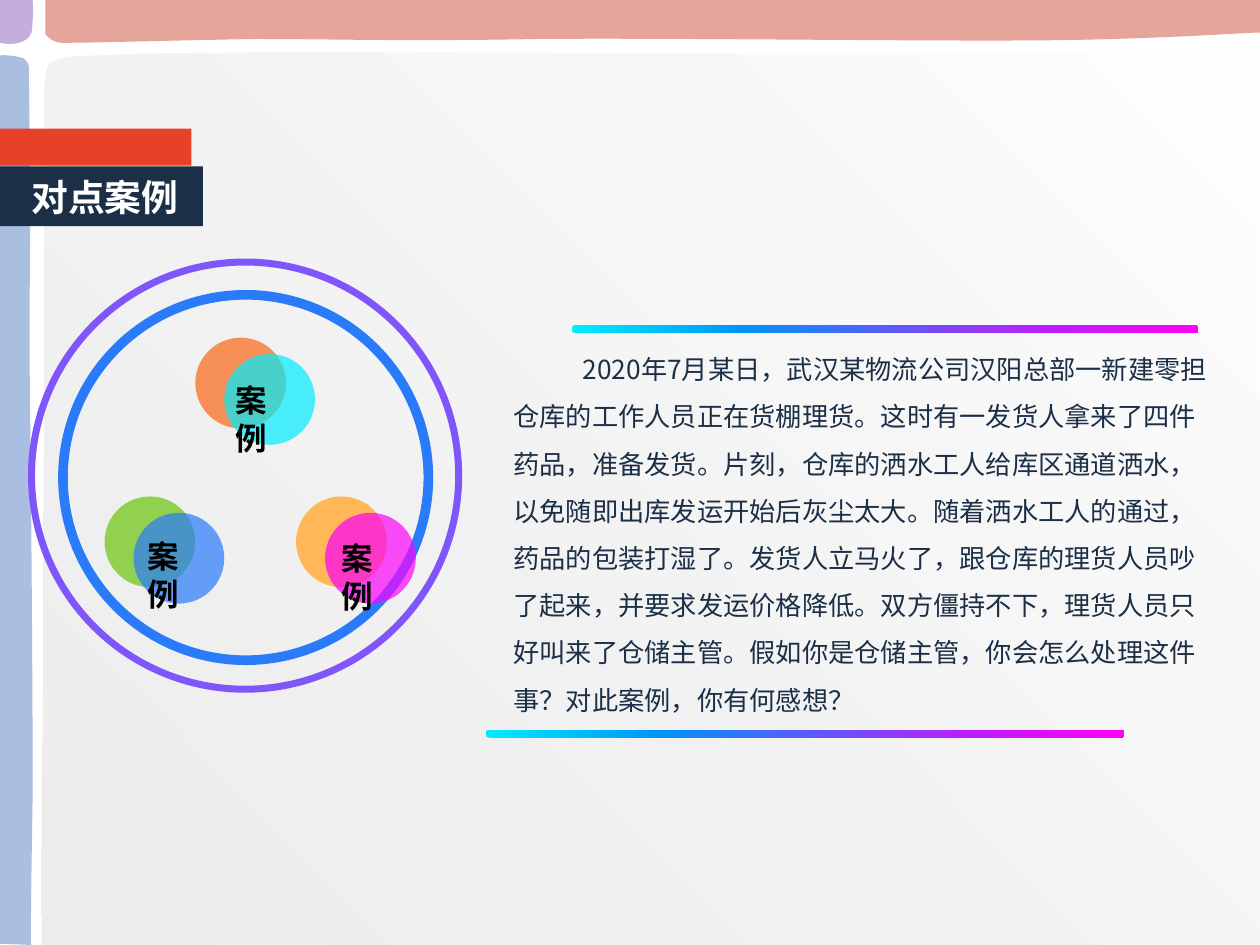
from lxml.etree import SubElement
from pptx import Presentation
from pptx.dml.color import RGBColor
from pptx.enum.shapes import MSO_SHAPE
from pptx.enum.text import MSO_ANCHOR, MSO_AUTO_SIZE, PP_ALIGN
from pptx.oxml.ns import qn
from pptx.util import Inches, Pt

FONT = "Noto Sans CJK SC"
COLS = 100
WIDE, HIGH = Inches(10), Inches(7.5)
CELL = WIDE / COLS
NAVY = "1B2F47"
GLOW = [(0, "00ECFE"), (27, "0094FA"), (76, "BE1DFB"), (100, "FC02F9")]
STORY = (
    "2020年7月某日，武汉某物流公司汉阳总部一新建零担仓库的工作人员正在货棚理货。"
    "这时有一发货人拿来了四件药品，准备发货。片刻，仓库的洒水工人给库区通道洒水，"
    "以免随即出库发运开始后灰尘太大。随着洒水工人的通过，药品的包装打湿了。"
    "发货人立马火了，跟仓库的理货人员吵了起来，并要求发运价格降低。双方僵持不下，"
    "理货人员只好叫来了仓储主管。假如你是仓储主管，你会怎么处理这件事？"
    "对此案例，你有何感想？"
)

PANEL = [(100, 75), (100, 4.2),
         (88.6, 3.8, 85.5, 4.2, 76, 4.2), (66.6, 4.2, 55, 4.3, 43.3, 4.2),
         (31.6, 4.1, 12.3, 4.1, 5.7, 4.5), (3.6, 4.8, 3.6, 4.9, 3.5, 7.3),
         (3.4, 9.6, 3.5, 11, 3.5, 18.2), (3.5, 25.6, 3.4, 41.2, 3.4, 50.6),
         (3.4, 60.1, 3.2, 66.2, 3.3, 75)]
BAND = [(100, 0), (100, 2.6),
        (100.1, 2.5, 92.8, 3.1, 83.2, 3.2), (73.6, 3.3, 53.1, 3, 42.6, 3.1),
        (32.1, 3.3, 26.5, 3.1, 20.3, 3.1), (14, 3.2, 7.7, 3.4, 4.9, 3.4),
        (4.1, 3.4, 3.6, 2.7, 3.6, 2.7), (3.6, 2.7, 3.6, 1.4, 3.6, 0)]
SIDE = [(0, 74.9), (2.5, 75),
        (2.4, 75.1, 2.5, 69.8, 2.6, 62.8), (2.6, 55.8, 2.5, 40.7, 2.4, 33),
        (2.3, 25.4, 2.4, 21.2, 2.4, 16.7), (2.4, 12.1, 2.3, 7.5, 2.3, 5.4),
        (2.3, 4.8, 1.8, 4.6, 1.8, 4.6), (0.7, 4.3, 0, 4.4, 0, 4.4)]
CORNER = [(0, 0), (2.6, 0), (2.7, 1.2, 2.5, 2.6, 2.5, 2.6),
          (2.3, 3.1, 1.9, 3.3, 1.5, 3.4), (0.8, 3.6, 0, 3.4, 0, 3.4)]


def color(code):
    return RGBColor.from_string(code)


def fade(tag, alpha):
    if alpha < 100:
        SubElement(tag, qn("a:alpha"), val=str(alpha * 1000))


def paint(shape, code, alpha=100):
    shape.fill.solid()
    shape.fill.fore_color.rgb = color(code)
    fade(shape.element.spPr.find(qn("a:solidFill"))[0], alpha)


def blend(shape, stops, angle):
    shape.fill.gradient()
    shape.fill.gradient_angle = angle
    ramp = shape.element.spPr.find(qn("a:gradFill")).find(qn("a:gsLst"))
    for old in list(ramp):
        ramp.remove(old)
    for spot, code, *alpha in stops:
        stop = SubElement(ramp, qn("a:gs"), pos=str(spot * 1000))
        tint = SubElement(stop, qn("a:srgbClr"), val=code)
        fade(tint, *(alpha or [100]))


def place(shape, box):
    shape.left, shape.top, shape.width, shape.height = (
        round(n * CELL) for n in box)


def draw(slide, kind, box):
    shape = slide.shapes.add_shape(kind, 0, 0, 0, 0)
    place(shape, box)
    shape.shadow.inherit = False
    shape.line.fill.background()
    return shape


def write(shape, text, size=18, code="000000", bold=False, space=1, indent=0):
    frame = shape.text_frame
    frame.word_wrap = True
    frame.auto_size = MSO_AUTO_SIZE.NONE
    frame.vertical_anchor = MSO_ANCHOR.TOP
    para = frame.paragraphs[0]
    props = para._p.get_or_add_pPr()
    props.set("marL", "0")
    props.set("indent", str(round(indent * CELL)))
    SubElement(props, qn("a:buNone"))
    para.alignment = PP_ALIGN.LEFT
    para.line_spacing = space
    para.space_before = Pt(0)
    run = para.add_run()
    run.text = text
    font = run.font
    font.size, font.bold, font.name = Pt(size), bold, FONT
    font.color.rgb = color(code)
    SubElement(run._r.get_or_add_rPr(), qn("a:ea"), typeface=FONT)


def bend(shape, route):
    lines = list(shape.element.iter(qn("a:lnTo")))
    for step in route[1:]:
        group, lines = lines[:len(step) // 2], lines[len(step) // 2:]
        if len(group) == 3:
            group[0].tag = qn("a:cubicBezTo")
            for line in group[1:]:
                group[0].append(line[0])
                line.getparent().remove(line)


def patch(slide, route):
    dots = [(step[n] * 100, step[n + 1] * 100)
            for step in route for n in range(0, len(step), 2)]
    outline = slide.shapes.build_freeform(*dots[0], scale=CELL / 100)
    outline.add_line_segments(dots[1:], close=True)
    shape = outline.convert_to_shape()
    bend(shape, route)
    shape.shadow.inherit = False
    shape.line.fill.background()
    return shape


def frame(slide, master):
    panel = patch(slide, PANEL)
    blend(panel, [(0, "E6E6E6", 70), (100, "FFFFFF")], 45)
    parts = [panel]
    for route, code in ((BAND, "DA7F70"), (SIDE, "85A3D5"), (CORNER, "AC8CD0")):
        parts.append(patch(slide, route))
        paint(parts[-1], code, 70)
    for n, part in enumerate(parts):
        part.element.nvSpPr.cNvPr.set("id", str(n + 20))
        master.shapes.element.insert(n + 2, part.element)


def front(shape):
    shape.element.getparent().append(shape.element)


def header(slide, x, y):
    paint(draw(slide, MSO_SHAPE.RECTANGLE, (x, y + 3, 16.1, 4.75)), NAVY)
    title = slide.shapes.title
    place(title, (x + 1.5, y + 3.2, 14.7, 4.5))
    write(title, "对点案例", size=21, code="FFFFFF", bold=True)
    front(title)
    paint(draw(slide, MSO_SHAPE.RECTANGLE, (x, y, 15.2, 2.95)), "E74127")


def ring(slide, x, y, size, code, width):
    half = size / 2
    shape = draw(slide, MSO_SHAPE.OVAL, (x - half, y - half, size, size))
    shape.fill.background()
    shape.line.color.rgb = color(code)
    shape.line.width = Pt(width)


def pair(slide, x, y, back, top):
    size = 7.2
    paint(draw(slide, MSO_SHAPE.OVAL, (x, y, size, size)), back)
    paint(draw(slide, MSO_SHAPE.OVAL, (x + 2.3, y + 1.3, size, size)), top, 70)


def label(slide, x, y):
    box = slide.shapes.add_textbox(0, 0, 0, 0)
    place(box, (x, y, 6.3, 7.1))
    write(box, "案例", bold=True)


def wheel(slide, x, y):
    ring(slide, x, y + 0.15, 29, "297BFA", 5.5)
    ring(slide, x - 0.05, y, 33.9, "8056FA", 4)
    pair(slide, x - 4, y - 10.95, "F79056", "00ECFE")
    pair(slide, x - 11.2, y + 1.65, "92D050", "297BFA")
    pair(slide, x + 4, y + 1.65, "FFB757", "FC02F9")
    for dx, dy in ((-1.8, -8), (-8.8, 4.4), (6.6, 4.55)):
        label(slide, x + dx, y + dy)


def bar(slide, x, y, width):
    shape = draw(slide, MSO_SHAPE.ROUNDED_RECTANGLE, (x, y, width, 0.65))
    shape.adjustments[0] = 0.42
    blend(shape, GLOW, 0)


def story(slide, x, y, width, height):
    bar(slide, x + 5.65, y - 0.5, 49.7)
    bar(slide, x - 1.2, y + height + 0.3, 50.65)
    body = slide.placeholders[1]
    place(body, (x, y, width, height))
    write(body, STORY, size=15, code=NAVY, space=1.5, indent=5.5)
    front(body)


def main():
    deck = Presentation()
    deck.slide_width, deck.slide_height = WIDE, HIGH
    slide = deck.slides.add_slide(deck.slide_layouts[1])
    frame(slide, deck.slide_master)
    header(slide, 0, 10.2)
    wheel(slide, 19.5, 37.75)
    story(slide, 39.75, 26.3, 57.7, 31.3)
    deck.save("out.pptx")


if __name__ == "__main__":
    main()
